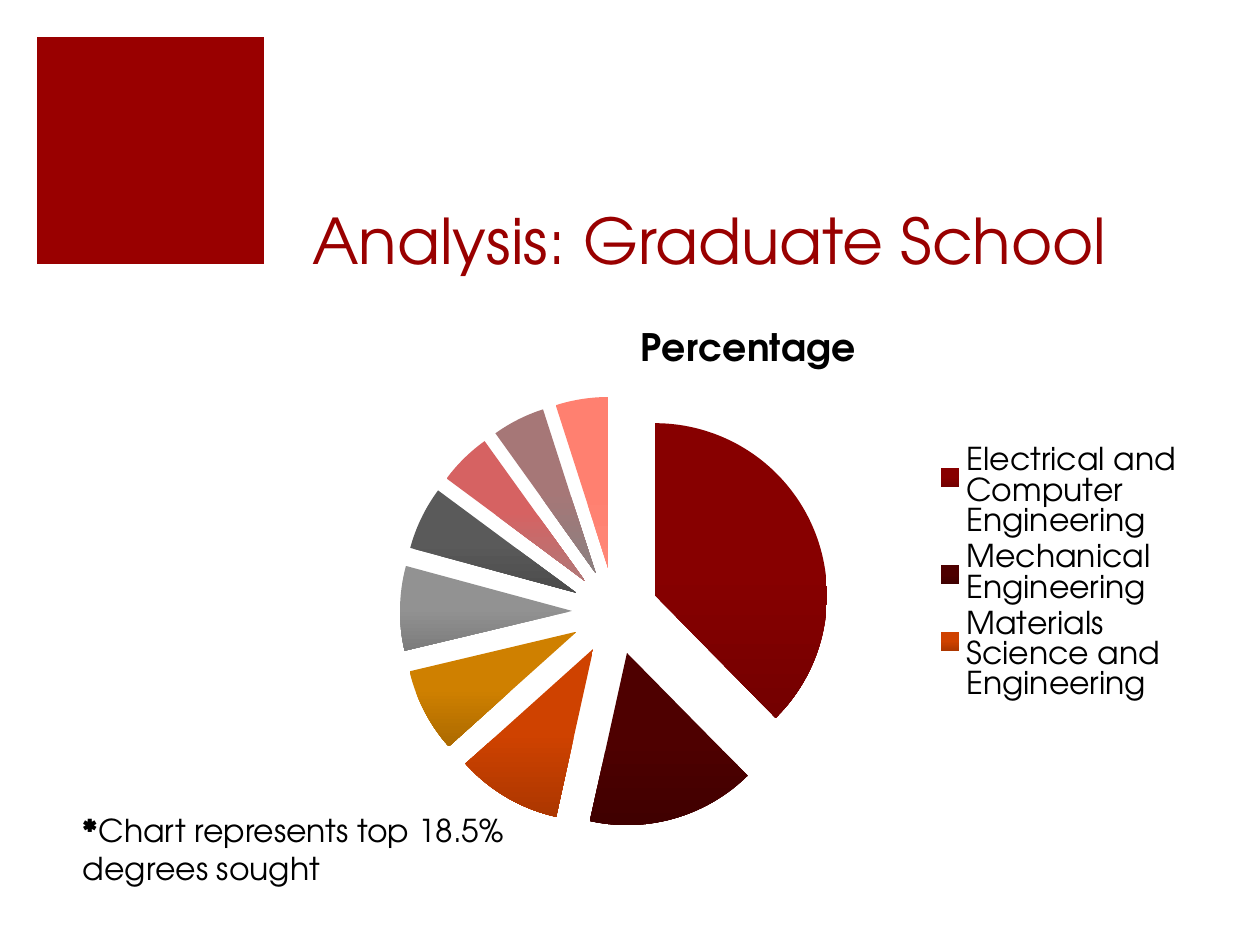
from dataclasses import dataclass

from lxml import etree
from pptx import Presentation
from pptx.chart.data import CategoryChartData
from pptx.chart.point import Point
from pptx.dml.color import RGBColor
from pptx.enum.chart import XL_CHART_TYPE, XL_LEGEND_POSITION
from pptx.enum.shapes import MSO_SHAPE
from pptx.enum.text import MSO_ANCHOR
from pptx.util import Pt

PIE = XL_CHART_TYPE.PIE
LEGEND_RIGHT = XL_LEGEND_POSITION.RIGHT
RECTANGLE = MSO_SHAPE.RECTANGLE
TOP, BOTTOM = MSO_ANCHOR.TOP, MSO_ANCHOR.BOTTOM


@dataclass(frozen=True)
class Theme:
    font: str = "TeX Gyre Adventor"
    accent: str = "990000"
    text: str = "000000"
    heading_size: float = 36
    chart_title_size: float = 21.6
    body_size: float = 18
    slices: tuple = (
        ("870000", "740000"),
        ("4E0000", "400000"),
        ("CF4200", "AC3700"),
        ("CF8000", "AC6A00"),
        ("929292", "7C7C7C"),
        ("5A5A5A", "4C4C4C"),
        ("D66262", "B07878"),
        ("A67777", "8A8080"),
        ("FF8070", "FF8777"),
    )


class SlideBuilder:
    def __init__(self, slide, theme):
        self.slide = slide
        self.theme = theme

    def style(self, font, size, color, bold=False):
        font.name = self.theme.font
        font.size = Pt(size)
        font.bold = bold
        font.color.rgb = RGBColor.from_string(color)

    def block(self, box, color):
        square = self.slide.shapes.add_shape(RECTANGLE, *map(Pt, box))
        square.shadow.inherit = False
        square.fill.solid()
        square.fill.fore_color.rgb = RGBColor.from_string(color)
        square.line.fill.background()

    def text(self, box, content, size, color, anchor=TOP, bold_lead=""):
        frame = self.slide.shapes.add_textbox(*map(Pt, box)).text_frame
        frame.word_wrap = True
        frame.vertical_anchor = anchor
        paragraph = frame.paragraphs[0]
        self.style(paragraph.font, size, color)
        if bold_lead:
            lead = paragraph.add_run()
            lead.text = bold_lead
            lead.font.bold = True
        paragraph.add_run().text = content

    def pie(self, box, title, categories, values, explosion):
        theme = self.theme
        data = CategoryChartData()
        data.categories = categories
        data.add_series(title, values)
        chart = self.slide.shapes.add_chart(PIE, *map(Pt, box), data).chart
        self.style(chart.font, theme.body_size, theme.text)

        chart.has_title = True
        heading = chart.chart_title.text_frame
        heading.text = title
        self.style(heading.paragraphs[0].font, theme.chart_title_size, theme.text, bold=True)

        chart.has_legend = True
        chart.legend.position = LEGEND_RIGHT
        chart.legend.include_in_layout = False
        self.style(chart.legend.font, theme.body_size, theme.text)

        plot = chart.plots[0]
        plot.vary_by_categories = True
        series = plot.series[0]
        for index, shades in enumerate(theme.slices):
            fill = Point(series._element, index).format.fill
            fill.gradient()
            fill.gradient_angle = 270
            for stop, shade, position in zip(fill.gradient_stops, shades, (0.5, 1)):
                stop.color.rgb = RGBColor.from_string(shade)
                stop.position = position

        series_name = series._element.find("{*}tx")
        namespace = etree.QName(series_name).namespace
        exploded = etree.Element(f"{{{namespace}}}explosion", val=str(explosion))
        series_name.addnext(exploded)


def main():
    presentation = Presentation()
    presentation.slide_width, presentation.slide_height = Pt(720), Pt(540)
    theme = Theme()
    builder = SlideBuilder(presentation.slides.add_slide(presentation.slide_layouts[6]), theme)

    builder.block((21.2, 21.2, 129.6, 129.6), theme.accent)
    builder.text((171.4, 72, 512.6, 90), "Analysis: Graduate School",
                 theme.heading_size, theme.accent, anchor=BOTTOM)
    builder.pie(
        (171.4, 174.2, 512.6, 308.2),
        "Percentage",
        ("Electrical and Computer Engineering", "Mechanical Engineering",
         "Materials Science and Engineering"),
        (38, 16, 10, 8, 8, 6, 5, 5, 5),
        explosion=25,
    )
    builder.text((40.3, 460.1, 287.3, 51.1), "Chart represents top 18.5% degrees sought",
                 theme.body_size, theme.text, bold_lead="*")
    presentation.save("out.pptx")


if __name__ == "__main__":
    main()
